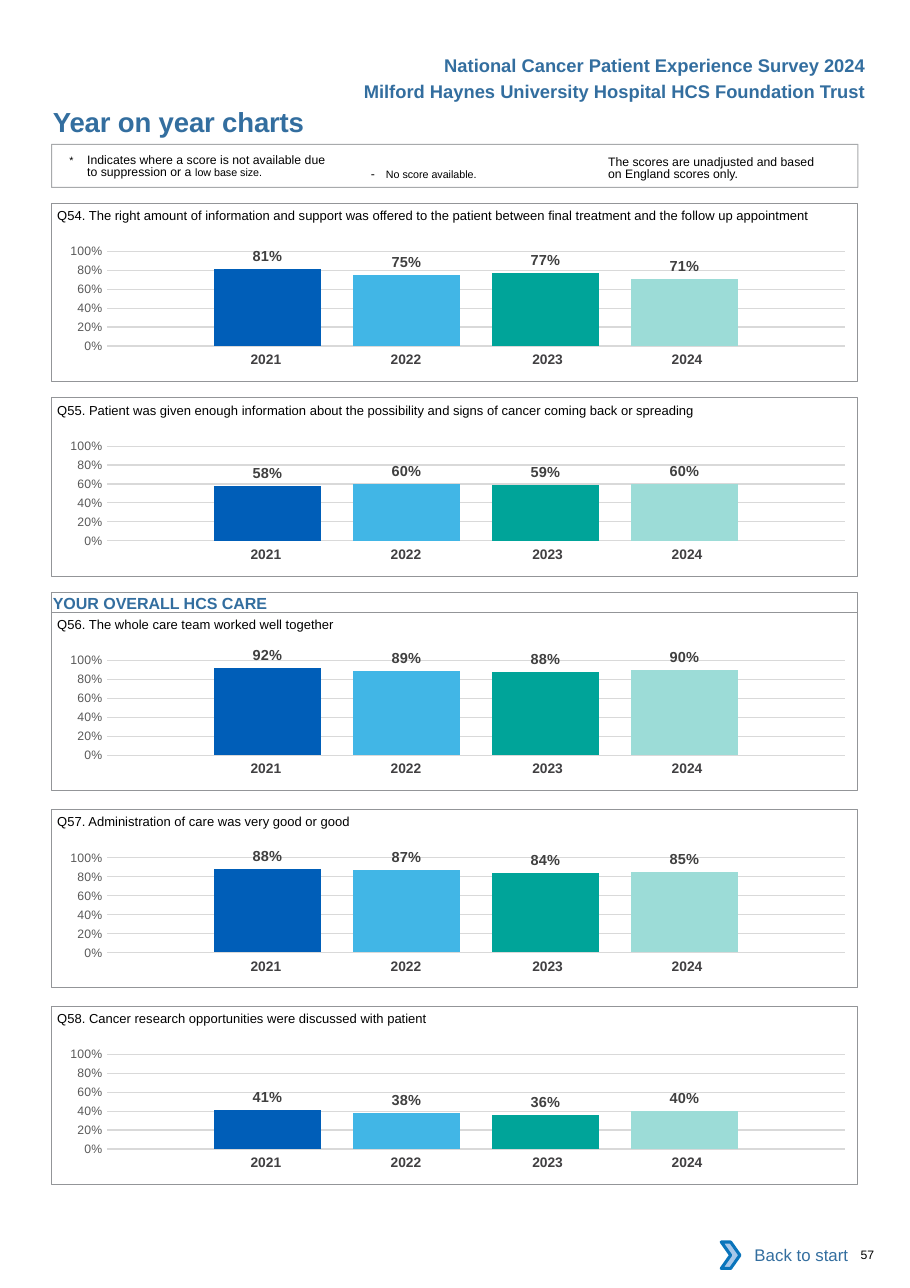
from lxml.etree import SubElement
from pptx import Presentation
from pptx.chart.data import CategoryChartData
from pptx.dml.color import RGBColor
from pptx.enum.chart import XL_CHART_TYPE, XL_LABEL_POSITION, XL_TICK_MARK
from pptx.enum.shapes import MSO_SHAPE
from pptx.enum.text import MSO_ANCHOR, PP_ALIGN
from pptx.oxml import parse_xml
from pptx.oxml.ns import nsdecls, qn
from pptx.util import Cm, Pt

COLOURS = {
    "heading": "336E9F", "text": "000000", "border": "939598", "white": "FFFFFF",
    "year": "414042", "label": "404040", "axis": "595959", "grid": "D9D9D9",
    "chevron": "A8C7E9", "chevron_line": "0A74BB",
}
YEARS = {"2021": "005EB8", "2022": "41B6E6", "2023": "00A499", "2024": "9CDCD7"}

FONTS = {
    "title": {"size": Pt(18), "bold": True, "color": "heading"},
    "header": {"size": Pt(12), "bold": True, "color": "heading"},
    "section": {"size": Pt(10.5), "bold": True, "color": "heading"},
    "link": {"size": Pt(11), "bold": False, "color": "heading"},
    "question": {"size": Pt(8.5), "color": "text"},
    "note": {"size": Pt(8), "color": "text"},
    "small_note": {"size": Pt(7), "color": "text"},
    "year": {"size": Pt(9), "bold": True, "color": "year"},
    "axis": {"size": Pt(8), "color": "axis"},
    "label": {"size": Pt(9.5), "bold": True, "color": "label"},
}

PANEL_LEFT, PANEL_WIDTH, PANEL_HEIGHT = 1.19, 18.59, 4.11

# Top of each panel, question, scores by year
PANELS = [
    (4.68, "Q54. The right amount of information and support was offered to the patient "
           "between final treatment and the follow up appointment", (0.81, 0.75, 0.77, 0.71)),
    (9.17, "Q55. Patient was given enough information about the possibility and signs of "
           "cancer coming back or spreading", (0.58, 0.6, 0.59, 0.6)),
    (14.11, "Q56. The whole care team worked well together", (0.92, 0.89, 0.88, 0.9)),
    (18.66, "Q57. Administration of care was very good or good", (0.88, 0.87, 0.84, 0.85)),
    (23.19, "Q58. Cancer research opportunities were discussed with patient",
     (0.41, 0.38, 0.36, 0.4)),
]


def rgb(name):
    return RGBColor.from_string(COLOURS.get(name, name))


def set_attrs(obj, **values):
    for name, value in values.items():
        setattr(obj, name, value)


def format_font(font, style):
    font.name = "Arial"
    for name, value in FONTS[style].items():
        if name == "color":
            font.color.rgb = rgb(value)
        else:
            setattr(font, name, value)


def fill_text(tf, runs, align=PP_ALIGN.LEFT, wrap=True, **spacing):
    """Write (text, style) runs into the first paragraph without margins."""
    set_attrs(tf, margin_left=0, margin_right=0, margin_top=0, margin_bottom=0,
              word_wrap=wrap, vertical_anchor=MSO_ANCHOR.TOP)
    p = tf.paragraphs[0]
    set_attrs(p, alignment=align, **spacing)
    for text, style in runs:
        r = p.add_run()
        r.text = text
        format_font(r.font, style)
    return p


def add_text(s, left, top, width, height, runs, **options):
    box = s.shapes.add_textbox(Cm(left), Cm(top), Cm(width), Cm(height))
    return fill_text(box.text_frame, runs, **options)


def add_hanging_indent(p, indent):
    pPr = p._p.get_or_add_pPr()
    pPr.set("marL", str(Cm(indent)))
    pPr.set("indent", str(-Cm(indent)))


def add_box(s, left, top, width, height, fill=None, line=None, weight=0.5,
            kind=MSO_SHAPE.RECTANGLE):
    sp = s.shapes.add_shape(kind, Cm(left), Cm(top), Cm(width), Cm(height))
    sp.shadow.inherit = False
    if fill:
        sp.fill.solid()
        sp.fill.fore_color.rgb = rgb(fill)
    else:
        sp.fill.background()
    if line:
        sp.line.color.rgb = rgb(line)
        sp.line.width = Pt(weight)
    else:
        sp.line.fill.background()
    return sp


def add_years(s, top):
    frame = s.shapes.add_table(1, len(YEARS), Cm(4.39), Cm(top), Cm(13.08), Cm(0.69))
    table = frame.table
    set_attrs(table, first_row=False, horz_banding=False)
    # Table style without fills or grid
    table._tbl.tblPr.find(qn("a:tableStyleId")).text = "{2D5ABB26-0587-4C30-8999-92F81FD0307C}"
    table.rows[0].height = Cm(0.69)
    columns = zip(YEARS, (3.23, 3.23, 3.4, 3.23), (0, 0, 0.1, 0.3))
    for i, (year, width, right) in enumerate(columns):
        table.columns[i].width = Cm(width)
        cell = table.cell(0, i)
        cell.fill.background()
        set_attrs(cell, margin_left=Cm(0.25), margin_right=Cm(right),
                  margin_top=Cm(0.13), margin_bottom=Cm(0.13))
        p = cell.text_frame.paragraphs[0]
        p.alignment = PP_ALIGN.CENTER
        r = p.add_run()
        r.text = year
        format_font(r.font, "year")


def set_plot_layout(chart, x, y, w, h):
    plot_area = chart._chartSpace.chart.plotArea
    for old in plot_area.findall(qn("c:layout")):
        plot_area.remove(old)
    layout = parse_xml(f"<c:layout {nsdecls('c')}><c:manualLayout/></c:layout>")
    values = {"layoutTarget": "inner", "xMode": "edge", "yMode": "edge",
              "x": x, "y": y, "w": w, "h": h}
    for tag, value in values.items():
        SubElement(layout[0], qn(f"c:{tag}")).set("val", str(value))
    plot_area.insert(0, layout)


def add_score_chart(s, top, scores):
    data = CategoryChartData(number_format="0%")
    data.categories = ["1"]
    for year, score in zip(YEARS, scores):
        data.add_series(year, [score])
    chart = s.shapes.add_chart(XL_CHART_TYPE.COLUMN_CLUSTERED, Cm(1), Cm(top),
                               Cm(18.59), Cm(3.28), data).chart
    set_attrs(chart, has_legend=False, has_title=False)
    set_attrs(chart.font, name="Calibri", size=Pt(10))
    chart.category_axis.visible = False
    axis = chart.value_axis
    set_attrs(axis, minimum_scale=0, maximum_scale=1, major_unit=0.2,
              major_tick_mark=XL_TICK_MARK.NONE, has_major_gridlines=True)
    set_attrs(axis.tick_labels, number_format="0%", number_format_is_linked=False)
    format_font(axis.tick_labels.font, "axis")
    axis.format.line.fill.background()
    grid = axis.major_gridlines.format.line
    grid.color.rgb = rgb("grid")
    grid.width = Pt(0.75)
    plot = chart.plots[0]
    set_attrs(plot, gap_width=200, overlap=-30, vary_by_categories=False)
    for series, colour in zip(plot.series, YEARS.values()):
        series.format.fill.solid()
        series.format.fill.fore_color.rgb = rgb(colour)
        labels = series.data_labels
        set_attrs(labels, show_value=True, position=XL_LABEL_POSITION.OUTSIDE_END,
                  number_format="0%", number_format_is_linked=False)
        format_font(labels.font, "label")
    set_plot_layout(chart, 0.079, 0.145, 0.915, 0.666)


def add_panel(s, top, question, scores):
    add_years(s, top + 3.31)
    add_score_chart(s, top + 0.64, scores)
    add_box(s, PANEL_LEFT, top, PANEL_WIDTH, PANEL_HEIGHT, line="border")
    add_text(s, 1.32, top + 0.1, 18.3, 0.4, [(question, "question")])


def add_notes(s):
    sp = add_box(s, PANEL_LEFT, 3.33, PANEL_WIDTH, 0.99, line="border", weight=0.75)
    line_colour = sp._element.spPr.find(qn("a:ln")).find(".//" + qn("a:srgbClr"))
    SubElement(line_colour, qn("a:alpha")).set("val", "80000")
    p = add_text(s, 1.6, 3.56, 6.09, 0.6, [
        ("*\t", "small_note"),
        ("Indicates where a score is not available due to suppression or a ", "note"),
        ("low base size.", "small_note")], line_spacing=Pt(8.1))
    add_hanging_indent(p, 0.41)
    p = add_text(s, 8.55, 3.84, 4.2, 0.35,
                 [("-\t", "note"), ("No score available.", "small_note")])
    add_hanging_indent(p, 0.35)
    add_text(s, 14.02, 3.61, 4.95, 0.6,
             [("The scores are unadjusted and based on England scores only.", "note")],
             line_spacing=Pt(8.1))


def main():
    prs = Presentation()
    set_attrs(prs, slide_width=Cm(20.98), slide_height=Cm(29.69))
    s = prs.slides.add_slide(prs.slide_layouts[5])

    # Headings
    title = s.shapes.title
    set_attrs(title, left=Cm(1.22), top=Cm(2.43), width=Cm(11.43), height=Cm(0.76))
    p = fill_text(title.text_frame, [("Year on year charts", "title")])
    p.runs[0].font._element.set("spc", "-10")
    for top, text in ((1.26, "National Cancer Patient Experience Survey 2024"),
                      (1.84, "Milford Haynes University Hospital HCS Foundation Trust")):
        add_text(s, 6.96, top, 13, 0.5, [(text, "header")], align=PP_ALIGN.RIGHT)
    add_notes(s)

    # Questions
    for top, question, scores in PANELS:
        add_panel(s, top, question, scores)
    section = add_box(s, PANEL_LEFT, 13.66, PANEL_WIDTH, 0.46, line="border")
    fill_text(section.text_frame, [("YOUR OVERALL HCS CARE", "section")])
    set_attrs(section.text_frame, margin_left=Cm(0.03), margin_top=Cm(0.02))

    # Footer
    link = add_box(s, 16.81, 28.4, 3, 1.07, fill="white")
    fill_text(link.text_frame, [("Back to start", "link")], align=PP_ALIGN.RIGHT)
    set_attrs(link.text_frame, margin_right=Cm(0.25), vertical_anchor=MSO_ANCHOR.MIDDLE)
    add_box(s, 16.63, 28.63, 0.43, 0.61, fill="chevron", line="chevron_line", weight=2,
            kind=MSO_SHAPE.CHEVRON)
    add_text(s, 19.84, 28.76, 1, 0.35, [("57", "note")])

    prs.save("out.pptx")


if __name__ == "__main__":
    main()
